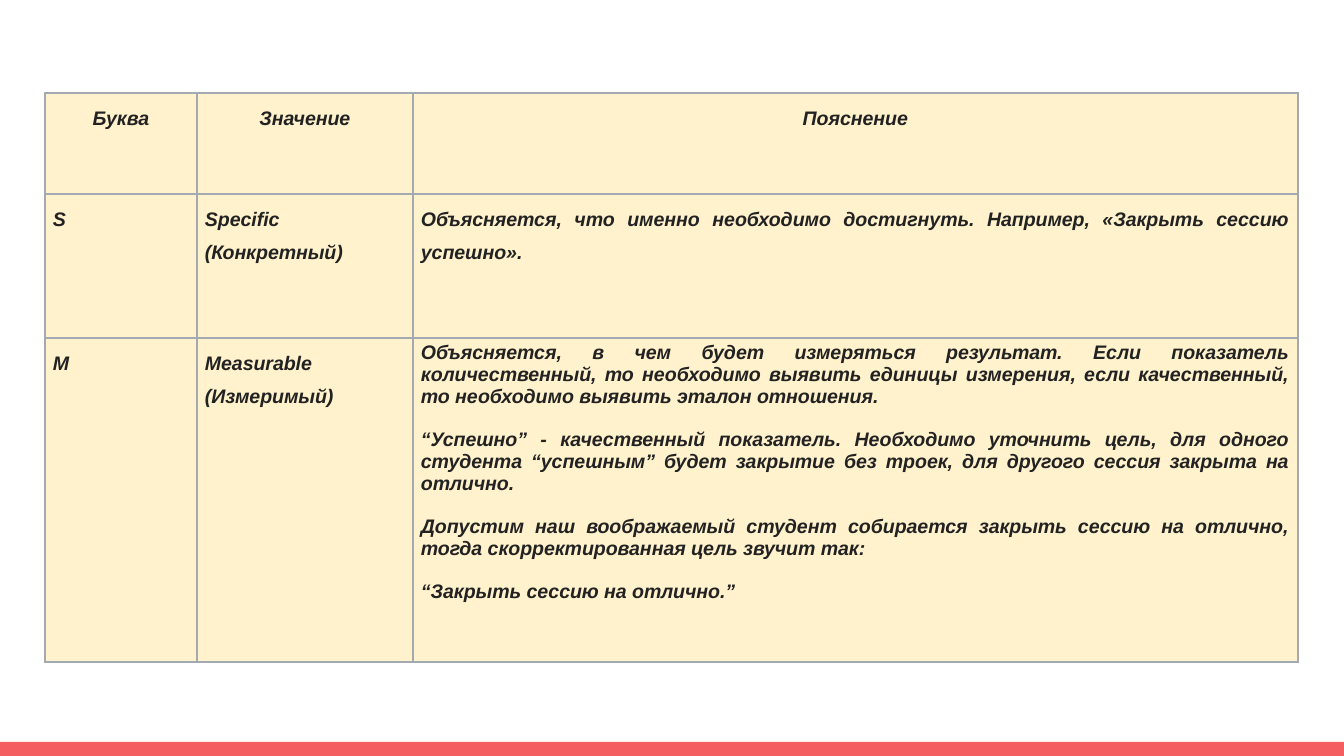
import lxml.etree
import pptx
import pptx.dml.color
import pptx.enum.shapes
import pptx.enum.text
import pptx.oxml.ns
import pptx.util

PX = 914400 / 134.4
COLORS = {"bar": "F55E61", "cell": "FFF2CC", "border": "A2A9B1", "text": "222222"}
ALIGN = pptx.enum.text.PP_ALIGN


def px(length):
    """Turn a length in pixels into EMU."""
    return pptx.util.Emu(round(length * PX))


def write_text(frame, text, align=ALIGN.JUSTIFY, line=1.5, before=11, after=11):
    """Write each line of text as a paragraph; before and after are in points."""
    for index, content in enumerate(text.split("\n")):
        paragraph = frame.paragraphs[0] if index == 0 else frame.add_paragraph()
        paragraph.alignment = align
        paragraph.line_spacing = line
        paragraph.space_before = pptx.util.Pt(before)
        paragraph.space_after = pptx.util.Pt(after)
        run = paragraph.add_run()
        run.text = content
        run.font.name = "Arial"
        run.font.size = pptx.util.Pt(10.5)
        run.font.bold = run.font.italic = True
        run.font.color.rgb = pptx.dml.color.RGBColor.from_string(COLORS["text"])


deck = pptx.Presentation()
deck.slide_width, deck.slide_height = px(1344), px(756)
slide = deck.slides.add_slide(deck.slide_layouts[6])

# Bottom bar
bar = slide.shapes.add_shape(
    pptx.enum.shapes.MSO_SHAPE.RECTANGLE, px(0), px(742), px(1344), px(14))
bar.shadow.inherit = False
bar.fill.solid()
bar.fill.fore_color.rgb = pptx.dml.color.RGBColor.from_string(COLORS["bar"])
bar.line.fill.background()

# Table of goal criteria
measurable = "\n".join([
    "Объясняется, в чем будет измеряться результат. Если показатель количественный, "
    "то необходимо выявить единицы измерения, если качественный, "
    "то необходимо выявить эталон отношения.",
    "“Успешно” - качественный показатель. Необходимо уточнить цель, для одного студента "
    "“успешным” будет закрытие без троек, для другого сессия закрыта на отлично.",
    "Допустим наш воображаемый студент собирается закрыть сессию на отлично, "
    "тогда скорректированная цель звучит так:",
    "“Закрыть сессию на отлично.”",
])
criteria = [
    ["Буква", "Значение", "Пояснение"],
    ["S", "Specific (Конкретный)",
     "Объясняется, что именно необходимо достигнуть. Например, «Закрыть сессию успешно»."],
    ["M", "Measurable (Измеримый)", measurable],
]
column_widths = [152, 216, 885]
row_heights = [101, 144, 324]

table = slide.shapes.add_table(
    len(row_heights), len(column_widths), px(45), px(93),
    px(sum(column_widths)), px(sum(row_heights))).table
table.first_row = False
table.horz_banding = False
for column, width in zip(table.columns, column_widths):
    column.width = px(width)
for row, height in zip(table.rows, row_heights):
    row.height = px(height)

for row_index, texts in enumerate(criteria):
    for column_index, text in enumerate(texts):
        cell = table.cell(row_index, column_index)
        cell.margin_left = cell.margin_right = px(8)
        cell.margin_top = cell.margin_bottom = px(4)

        properties = cell._tc.get_or_add_tcPr()
        for side in ("a:lnL", "a:lnR", "a:lnT", "a:lnB"):
            border = lxml.etree.SubElement(
                properties, pptx.oxml.ns.qn(side), w=str(pptx.util.Pt(0.75)))
            border_fill = lxml.etree.SubElement(border, pptx.oxml.ns.qn("a:solidFill"))
            lxml.etree.SubElement(
                border_fill, pptx.oxml.ns.qn("a:srgbClr"), val=COLORS["border"])
        cell.fill.solid()
        cell.fill.fore_color.rgb = pptx.dml.color.RGBColor.from_string(COLORS["cell"])

        if text == measurable:
            write_text(cell.text_frame, text, line=1.0, before=0, after=11.65)
        elif row_index == 0:
            write_text(cell.text_frame, text, align=ALIGN.CENTER)
        else:
            write_text(cell.text_frame, text)

deck.save("out.pptx")
